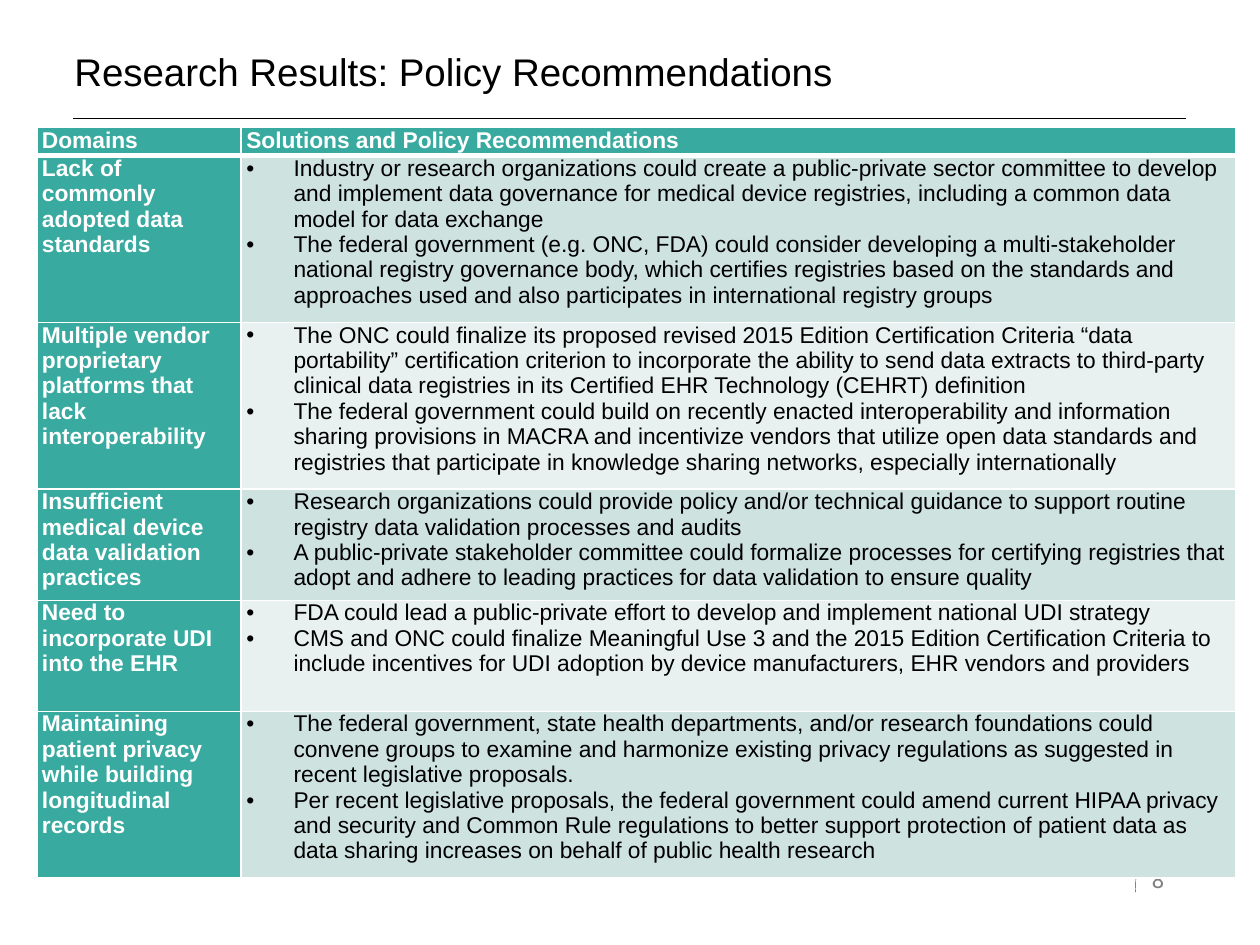
import pptx
import pptx.dml.color
import pptx.enum.shapes
import pptx.enum.text
import pptx.oxml
import pptx.oxml.ns
import pptx.util
from lxml import etree

Pt = pptx.util.Pt
ALIGN = pptx.enum.text.PP_ALIGN
ANCHOR = pptx.enum.text.MSO_ANCHOR

COLOURS = {
    "black": "000000",
    "white": "FFFFFF",
    "tick": "404040",
    "number": "808080",
    "teal": "38AAA0",
    "band_dark": "CEE2DF",
    "band_light": "E8F1F0",
}

HEADINGS = ["Domains", "Solutions and Policy Recommendations"]
RECOMMENDATIONS = [
    ("Lack of commonly adopted data standards", [
        "Industry or research organizations could create a public-private sector committee to develop "
        "and implement data governance for medical device registries, including a common data model "
        "for data exchange",
        "The federal government (e.g. ONC, FDA) could consider developing a multi-stakeholder national "
        "registry governance body, which certifies registries based on the standards and approaches "
        "used and also participates in international registry groups",
    ]),
    ("Multiple vendor proprietary platforms that lack interoperability", [
        "The ONC could finalize its proposed revised 2015 Edition Certification Criteria “data "
        "portability” certification criterion to incorporate the ability to send data extracts to "
        "third-party clinical data registries in its Certified EHR Technology (CEHRT) definition",
        "The federal government could build on recently enacted interoperability and information "
        "sharing provisions in MACRA and incentivize vendors that utilize open data standards and "
        "registries that participate in knowledge sharing networks, especially internationally",
    ]),
    ("Insufficient medical device data validation practices", [
        "Research organizations could provide policy and/or technical guidance to support routine "
        "registry data validation processes and audits",
        "A public-private stakeholder committee could formalize processes for certifying registries "
        "that adopt and adhere to leading practices for data validation to ensure quality",
    ]),
    ("Need to incorporate UDI into the EHR", [
        "FDA could lead a public-private effort to develop and implement national UDI strategy",
        "CMS and ONC could finalize Meaningful Use 3 and the 2015 Edition Certification Criteria to "
        "include incentives for UDI adoption by device manufacturers, EHR vendors and providers",
    ]),
    ("Maintaining patient privacy while building longitudinal records", [
        "The federal government, state health departments, and/or research foundations could convene "
        "groups to examine and harmonize existing privacy regulations as suggested in recent "
        "legislative proposals.",
        "Per recent legislative proposals, the federal government could amend current HIPAA privacy "
        "and security and Common Rule regulations to better support protection of patient data as "
        "data sharing increases on behalf of public health research",
    ]),
]
COLUMN_WIDTHS = [116.8, 568.4]
ROW_HEIGHTS = [16, 95.3, 95.3, 63.5, 63.5, 95.3]


def colour(name):
    return pptx.dml.color.RGBColor.from_string(COLOURS[name])


class SlideBuilder:
    font = "Arial"
    body_size = 13
    bullet_indent = 27

    def __init__(self, slide):
        self.slide = slide

    def add_span(self, para, text, size, tint, bold=False, font=None):
        span = para.add_run()
        span.text = text
        span.font.name = font or self.font
        span.font.size = Pt(size)
        span.font.bold = bold
        span.font.color.rgb = colour(tint)

    def line(self, start, end, tint, width):
        connector = self.slide.shapes.add_connector(
            pptx.enum.shapes.MSO_CONNECTOR.STRAIGHT, *map(Pt, start + end))
        connector.line.color.rgb = colour(tint)
        connector.line.width = Pt(width)
        properties = connector._element.spPr
        etree.SubElement(properties, pptx.oxml.ns.qn("a:effectLst"))

    def text(self, bounds, text, size, tint, anchor, insets, font=None):
        box = self.slide.shapes.add_textbox(*map(Pt, bounds))
        frame = box.text_frame
        frame.word_wrap = True
        frame.vertical_anchor = anchor
        frame.margin_left = frame.margin_right = Pt(insets[0])
        frame.margin_top = frame.margin_bottom = Pt(insets[1])
        self.add_span(frame.paragraphs[0], text, size, tint, font=font)

    def table(self, left, top, widths, heights):
        frame = self.slide.shapes.add_table(
            len(heights), len(widths), Pt(left), Pt(top), Pt(sum(widths)), Pt(sum(heights)))
        table = frame.table
        table.first_row = table.horz_banding = False
        for column, width in zip(table.columns, widths):
            column.width = Pt(width)
        for row, height in zip(table.rows, heights):
            row.height = Pt(height)
        return table

    def cell(self, cell, texts, fill, tint="white", bold=True, bullets=False,
             align=ALIGN.LEFT, top_border=1, bottom_border=1):
        cell.margin_left = cell.margin_right = Pt(3)
        cell.margin_top = cell.margin_bottom = 0
        cell.fill.solid()
        cell.fill.fore_color.rgb = colour(fill)
        self.borders(cell, top_border, bottom_border)
        frame = cell.text_frame
        for index, text in enumerate(texts):
            para = frame.add_paragraph() if index else frame.paragraphs[0]
            para.alignment = align
            if bullets:
                self.bullet(para)
            self.add_span(para, text, self.body_size, tint, bold)

    def borders(self, cell, top, bottom):
        """Put white cell borders ahead of the fill, as the schema requires."""
        properties = cell._tc.get_or_add_tcPr()
        widths = {"lnL": 1, "lnR": 1, "lnT": top, "lnB": bottom}
        for position, (tag, width) in enumerate(widths.items()):
            properties.insert(position, pptx.oxml.parse_xml(
                f'<a:{tag} {pptx.oxml.ns.nsdecls("a")} w="{Pt(width)}"><a:solidFill>'
                f'<a:srgbClr val="{COLOURS["white"]}"/></a:solidFill></a:{tag}>'))

    def bullet(self, para):
        properties = para._p.get_or_add_pPr()
        properties.set("marL", str(Pt(self.bullet_indent)))
        properties.set("indent", str(-Pt(self.bullet_indent)))
        etree.SubElement(properties, pptx.oxml.ns.qn("a:buFont"), typeface=self.font)
        etree.SubElement(properties, pptx.oxml.ns.qn("a:buChar"), char="•")


def main():
    deck = pptx.Presentation()
    deck.slide_width, deck.slide_height = Pt(720), Pt(540)
    page = SlideBuilder(deck.slides.add_slide(deck.slide_layouts[6]))

    page.line((649.2, 497.5), (648.8, 509.8), "tick", 0.25)
    page.line((42, 67.7), (678, 67.7), "black", 0.75)
    page.text((36, 21.6, 648, 35.3), "Research Results: Policy Recommendations",
              22, "black", ANCHOR.BOTTOM, (6.5, 3))
    page.text((651, 488.2, 41.8, 28.8), "8", 13, "number", ANCHOR.MIDDLE, (7.2, 3.6), "Roboto")

    table = page.table(21, 73, COLUMN_WIDTHS, ROW_HEIGHTS)
    for column, heading in enumerate(HEADINGS):
        page.cell(table.cell(0, column), [heading], "teal",
                  align=ALIGN.JUSTIFY, bottom_border=3)
    for row, (domain, solutions) in enumerate(RECOMMENDATIONS, start=1):
        top_border = 3 if row == 1 else 1
        band = "band_dark" if row % 2 else "band_light"
        page.cell(table.cell(row, 0), [domain], "teal", top_border=top_border)
        page.cell(table.cell(row, 1), solutions, band, tint="black", bold=False,
                  bullets=True, top_border=top_border)

    deck.save("out.pptx")


if __name__ == "__main__":
    main()
